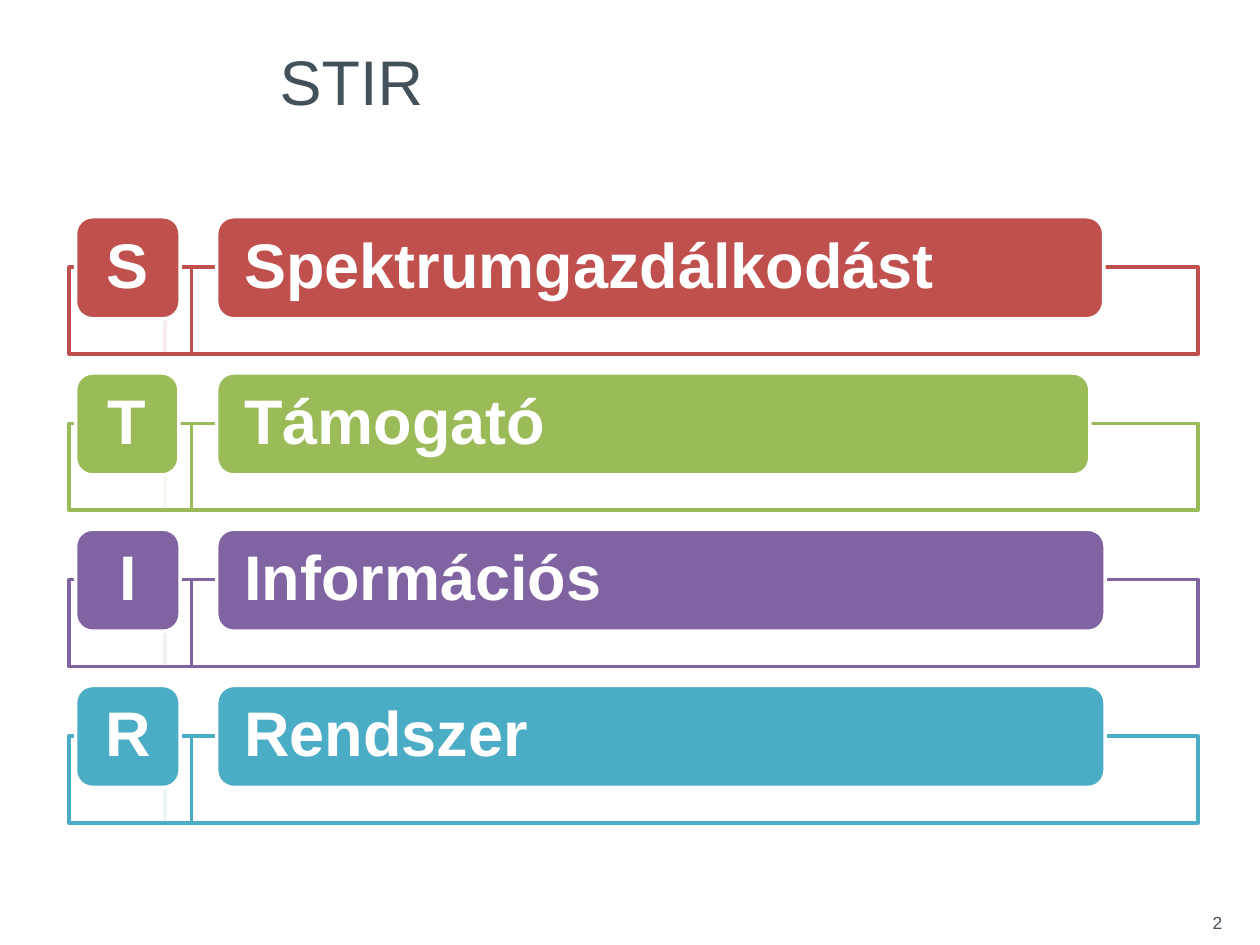
from pptx import Presentation
from pptx.dml.color import RGBColor
from pptx.enum.shapes import MSO_SHAPE
from pptx.enum.text import MSO_ANCHOR, MSO_AUTO_SIZE, PP_ALIGN
from pptx.oxml.ns import qn
from pptx.util import Pt
from lxml import etree

PX = 9144  # 100 px to the inch
COLORS = {
    "white": "FFFFFF", "text": "43515A", "red": "C0504D",
    "green": "9BBB59", "purple": "8064A2", "blue": "4BACC6",
}


def add_block(kind, box, fill, line):
    shape = slide.shapes.add_shape(kind, *[value * PX for value in box])
    shape.shadow.inherit = False
    shape.fill.solid()
    shape.fill.fore_color.rgb = RGBColor.from_string(COLORS[fill])
    shape.line.color.rgb = RGBColor.from_string(COLORS[line])
    shape.line.width = Pt(2)
    return shape


def write(shape, text, size, color, bold, align, anchor, insets):
    frame = shape.text_frame
    frame.word_wrap = True
    frame.auto_size = MSO_AUTO_SIZE.NONE
    frame.vertical_anchor = anchor
    frame.margin_left = frame.margin_right = insets[0] * PX
    frame.margin_top = frame.margin_bottom = insets[1] * PX
    paragraph = frame.paragraphs[0]
    paragraph.alignment = align
    run = paragraph.add_run()
    run.text = text
    run.font.name = "Arial"
    run.font.size = Pt(size)
    run.font.bold = bold
    run.font.color.rgb = RGBColor.from_string(COLORS[color])
    return paragraph


presentation = Presentation()
presentation.slide_width = 1000 * PX
presentation.slide_height = 750 * PX
slide = presentation.slides.add_slide(presentation.slide_layouts[5])

# Title
title = slide.shapes.title
title.left, title.top, title.width, title.height = [
    value * PX for value in (212, 34, 706, 60)]
paragraph = write(title, "STIR", 36, "text", False,
                  PP_ALIGN.LEFT, MSO_ANCHOR.BOTTOM, (10, 0))
paragraph.line_spacing = Pt(22)

# Words first, then their initials: frame, label left, inset, alignment, rows
words = [("Spektrumgazdálkodást", 704), ("Támogató", 693),
         ("Információs", 705), ("Rendszer", 705)]
initials = [("S", 83), ("T", 82), ("I", 83), ("R", 83)]
columns = [
    (131, 820, 172, 18, PP_ALIGN.LEFT, words),
    (55, 97, 60, 0, PP_ALIGN.CENTER, initials),
]
row_colors = ["red", "green", "purple", "blue"]
for frame_left, frame_width, label_left, inset, align, rows in columns:
    for index, ((text, width), color) in enumerate(zip(rows, row_colors)):
        top = 172 + 124 * index

        # Outlined frame with a nearly opaque white fill
        box = add_block(MSO_SHAPE.RECTANGLE,
                        (frame_left, top + 40, frame_width, 69), "white", color)
        fill_color = box.fill._xPr.find(qn("a:solidFill"))[0]
        etree.SubElement(fill_color, qn("a:alpha")).set("val", "90000")

        # Coloured label
        label = add_block(MSO_SHAPE.ROUNDED_RECTANGLE,
                          (label_left, top, width, 81), color, "white")
        paragraph = write(label, text, 36, "white", True,
                          align, MSO_ANCHOR.MIDDLE, (inset, 0))
        paragraph.line_spacing = 0.9

# Slide number
number = slide.shapes.add_textbox(933 * PX, 719 * PX, 47 * PX, 40 * PX)
write(number, "2", 10, "text", False,
      PP_ALIGN.RIGHT, MSO_ANCHOR.TOP, (10, 5))

presentation.save("out.pptx")
